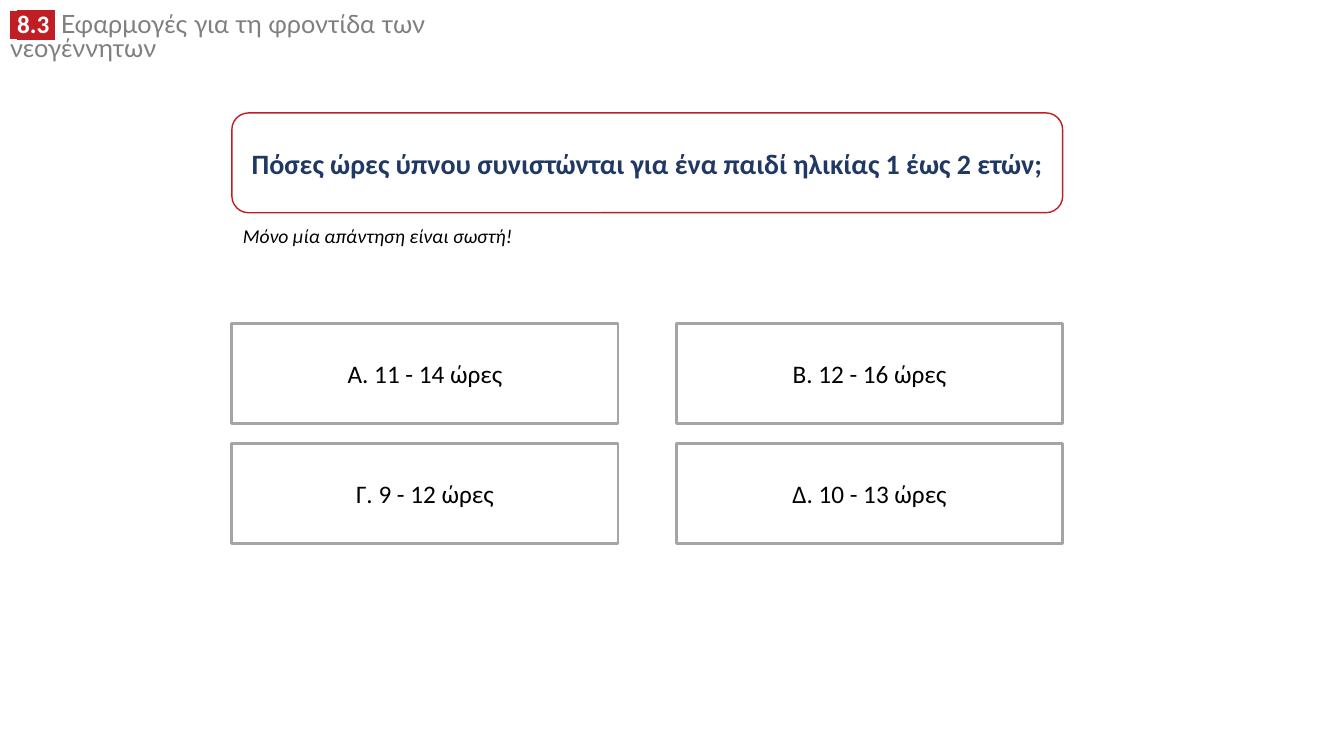
import pptx
import pptx.util
import pptx.dml.color
import pptx.enum.shapes
import pptx.enum.text
import pptx.oxml
import pptx.oxml.ns

Inches, Pt = pptx.util.Inches, pptx.util.Pt
RGB = pptx.dml.color.RGBColor.from_string
SHAPE = pptx.enum.shapes.MSO_SHAPE
ALIGN = pptx.enum.text.PP_ALIGN
ANCHOR = pptx.enum.text.MSO_ANCHOR
FIT = pptx.enum.text.MSO_AUTO_SIZE

COLORS = {"white": "FFFFFF", "red": "C01E24", "gray": "7F7F7F",
          "border": "A5A5A5", "navy": "203864", "black": "000000"}


def add_run(p, text, size=18, font="Calibri", color="black", bold=False,
            italic=False, highlight=None):
    r = p.add_run()
    r.text = text
    r.font.size = Pt(size)
    r.font.name = font
    r.font.bold = bold
    r.font.italic = italic
    r.font.color.rgb = RGB(COLORS[color])
    if highlight:
        ns = pptx.oxml.ns.nsdecls("a")
        mark = pptx.oxml.parse_xml(
            f'<a:highlight {ns}><a:srgbClr val="{COLORS[highlight]}"/></a:highlight>')
        r.font.fill  # the highlight must follow the fill in the run properties
        r.font._element.find(pptx.oxml.ns.qn("a:solidFill")).addnext(mark)


def add_box(s, kind, left, top, width, line, line_width):
    """Add a white outlined box and return its centred paragraph."""
    sp = s.shapes.add_shape(kind, Inches(left), Inches(top), Inches(width), Inches(0.99))
    sp.shadow.inherit = False
    sp.fill.solid()
    sp.fill.fore_color.rgb = RGB(COLORS["white"])
    sp.line.color.rgb = RGB(COLORS[line])
    sp.line.width = Pt(line_width)
    tf = sp.text_frame
    tf.word_wrap = True
    tf.vertical_anchor = ANCHOR.MIDDLE
    p = tf.paragraphs[0]
    p.alignment = ALIGN.CENTER
    return p


prs = pptx.Presentation()
prs.slide_width, prs.slide_height = Inches(13.33), Inches(7.5)
s = prs.slides.add_slide(prs.slide_layouts[5])

# Section title
title = s.shapes.title
title.left, title.top = Inches(0), Inches(0.09)
title.width, title.height = Inches(5.73), Inches(0.34)
tf = title.text_frame
tf.word_wrap = True
tf.auto_size = FIT.SHAPE_TO_FIT_TEXT
tf.vertical_anchor = ANCHOR.TOP
p = tf.paragraphs[0]
p.alignment = ALIGN.LEFT
p.line_spacing = 0.8
add_run(p, " ", font="Arial", color="white", bold=True, highlight="red")
add_run(p, "8.3 ", color="white", bold=True, highlight="red")
add_run(p, " ", color="gray")
add_run(p, "Εφαρμογές για τη φροντίδα των νεογέννητων", font="Lato", color="gray")

# Question
p = add_box(s, SHAPE.ROUNDED_RECTANGLE, 2.3, 1.12, 8.24, "red", 1)
add_run(p, "Πόσες ώρες ύπνου συνιστώνται για ένα παιδί ηλικίας 1 έως 2 ετών;",
        size=20, color="navy", bold=True)

hint = s.shapes.add_textbox(Inches(2.31), Inches(2.17), Inches(2.88), Inches(0.34))
hint.text_frame.word_wrap = True
hint.text_frame.auto_size = FIT.SHAPE_TO_FIT_TEXT
add_run(hint.text_frame.paragraphs[0], "Μόνο μία απάντηση είναι σωστή!", size=14, italic=True)

# Answers in a two by two grid
answers = ["A. 11 - 14 ώρες", "B. 12 - 16 ώρες", "Γ. 9 - 12 ώρες", "Δ. 10 - 13 ώρες"]
for i, answer in enumerate(answers):
    row, col = divmod(i, 2)
    p = add_box(s, SHAPE.RECTANGLE, 2.3 + 4.41 * col, 3.21 + 1.19 * row, 3.83, "border", 2)
    add_run(p, answer)

prs.save("out.pptx")
